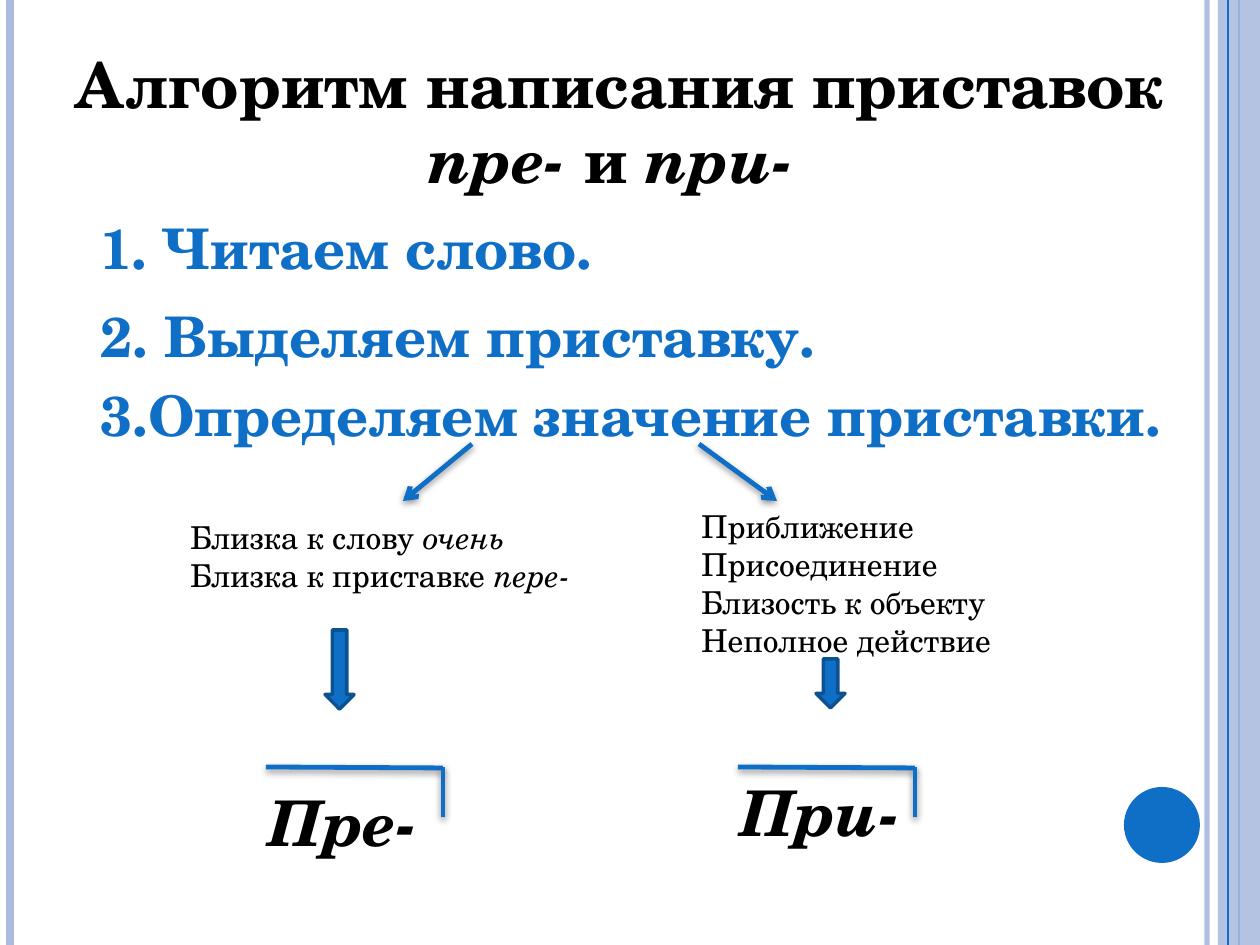
from dataclasses import dataclass

from lxml.etree import SubElement
from pptx import Presentation
from pptx.dml.color import RGBColor
from pptx.enum.shapes import MSO_CONNECTOR, MSO_SHAPE
from pptx.enum.text import MSO_AUTO_SIZE, PP_ALIGN
from pptx.oxml.ns import qn
from pptx.util import Pt

PX = 914400 / 126
SLIDE_W, SLIDE_H = 1260, 945


@dataclass(frozen=True)
class Theme:
    font: str = "TeX Gyre Schola"
    blue: str = "0F6FC6"
    dark_blue: str = "0B5292"
    pale: str = "ABBBDF"
    black: str = "000000"
    heading: int = 36
    step: int = 32
    body: int = 18
    stroke: float = 2.75


THEME = Theme()

# Content: each paragraph is a list of (text, italic) runs
TITLE = [[("Алгоритм написания приставок ", False), ("пре-", True),
          (" и ", False), ("при- ", True)]]
STEPS = [  # text, top, width, wraps
    ("1. Читаем слово.", 207, 522, False),
    ("2. Выделяем приставку.", 295, 746, False),
    ("3.Определяем значение приставки.", 374, 1113, True),
]
BRANCHES = [
    {"meanings": [[("Близка к слову ", False), ("очень", True)],
                  [("Близка к приставке ", False), ("пере-", True)]],
     "meanings_box": (178, 512, 416, 89),
     "pointer": (472, 444, 403, 501),
     "down_arrow": (325, 630, 29, 79),
     "prefix": "Пре-", "prefix_box": (256, 777, 181, 89)},
    {"meanings": [[("Приближение", False)], [("Присоединение", False)],
                  [("Близость к объекту", False)], [("Неполное действие", False)]],
     "meanings_box": (689, 501, 319, 165),
     "pointer": (699, 444, 777, 501),
     "down_arrow": (816, 659, 29, 49),
     "prefix": "При-", "prefix_box": (728, 767, 186, 89)},
]
STRIPES = [(1207, 3, THEME.pale, 93), (10, 4.5, THEME.pale, 100),
           (1239, 1.5, THEME.blue, 100)]  # x, width, colour, opacity
BAND = (1218, 0, 42, SLIDE_H)
BAND_LINE = (1228, 0.75, THEME.blue, 100)
DOT = (1124, 787, 76, 76)
MARK_TOP, MARK_WIDTH, MARK_DROP, MARK_INSET = 767, 177, 50, 10


def emu(*lengths):
    return [round(length * PX) for length in lengths]


def set_opacity(fill, percent):
    if percent < 100:
        color = fill._xPr.find(qn("a:solidFill"))[0]
        SubElement(color, qn("a:alpha"), val=str(percent * 1000))


def add_line(slide, ends, color, width, opacity=100, shadow=False, arrow=False):
    line = slide.shapes.add_connector(MSO_CONNECTOR.STRAIGHT, *emu(*ends))
    line.line.width = Pt(width)
    line.line.color.rgb = RGBColor.from_string(color)
    set_opacity(line.line.fill, opacity)
    properties = line._element.spPr
    if arrow:
        SubElement(properties.find(qn("a:ln")), qn("a:tailEnd"), type="arrow")
    effects = SubElement(properties, qn("a:effectLst"))
    if shadow:
        outer = SubElement(effects, qn("a:outerShdw"), blurRad=str(Pt(4)),
                           dist=str(Pt(1.6)), dir="5400000", rotWithShape="0")
        tint = SubElement(outer, qn("a:srgbClr"), val=THEME.black)
        SubElement(tint, qn("a:alpha"), val="42000")


def add_stripe(slide, x, width, color, opacity):
    add_line(slide, (x, 0, x, SLIDE_H), color, width, opacity)


def add_block(slide, kind, box, fill, outline=None, opacity=100):
    block = slide.shapes.add_shape(kind, *emu(*box))
    block.shadow.inherit = False
    block.fill.solid()
    block.fill.fore_color.rgb = RGBColor.from_string(fill)
    set_opacity(block.fill, opacity)
    if outline:
        block.line.color.rgb = RGBColor.from_string(outline)
        block.line.width = Pt(2)
    else:
        block.line.fill.background()


def add_text(slide, box, paragraphs, size, color=THEME.black, bold=False,
             wrap=False, align=PP_ALIGN.LEFT):
    frame = slide.shapes.add_textbox(*emu(*box)).text_frame
    frame.word_wrap = wrap
    frame.auto_size = MSO_AUTO_SIZE.SHAPE_TO_FIT_TEXT
    for i, parts in enumerate(paragraphs):
        paragraph = frame.add_paragraph() if i else frame.paragraphs[0]
        paragraph.alignment = align
        for text, italic in parts:
            run = paragraph.add_run()
            run.text = text
            run.font.name = THEME.font
            run.font.size = Pt(size)
            run.font.bold = bold
            run.font.italic = italic
            run.font.color.rgb = RGBColor.from_string(color)


def add_branch(slide, branch):
    add_text(slide, branch["meanings_box"], branch["meanings"], THEME.body)
    add_line(slide, branch["pointer"], THEME.blue, THEME.stroke,
             shadow=True, arrow=True)
    add_block(slide, MSO_SHAPE.DOWN_ARROW, branch["down_arrow"],
              THEME.blue, THEME.dark_blue)
    add_text(slide, branch["prefix_box"], [[(branch["prefix"], True)]],
             THEME.heading, bold=True)
    # Prefix mark: a bar over the letters and a short drop at its right end
    left = branch["prefix_box"][0] + MARK_INSET
    right = left + MARK_WIDTH
    for ends in ((left, MARK_TOP, right, MARK_TOP + 1),
                 (right, MARK_TOP, right, MARK_TOP + MARK_DROP)):
        add_line(slide, ends, THEME.blue, THEME.stroke, shadow=True)


def main():
    deck = Presentation()
    deck.slide_width, deck.slide_height = emu(SLIDE_W, SLIDE_H)
    slide = deck.slides.add_slide(deck.slide_layouts[6])

    # Side decoration
    for stripe in STRIPES:
        add_stripe(slide, *stripe)
    add_block(slide, MSO_SHAPE.RECTANGLE, BAND, THEME.pale, opacity=87)
    add_stripe(slide, *BAND_LINE)
    add_block(slide, MSO_SHAPE.OVAL, DOT, THEME.blue)

    # Title and steps
    add_text(slide, (29, 39, 1182, 165), TITLE, THEME.heading, bold=True,
             wrap=True, align=PP_ALIGN.CENTER)
    for text, top, width, wrap in STEPS:
        add_text(slide, (88, top, width, 81), [[(text, False)]], THEME.step,
                 THEME.blue, bold=True, wrap=wrap)

    # Two outcomes
    for branch in BRANCHES:
        add_branch(slide, branch)

    deck.save("out.pptx")


if __name__ == "__main__":
    main()
